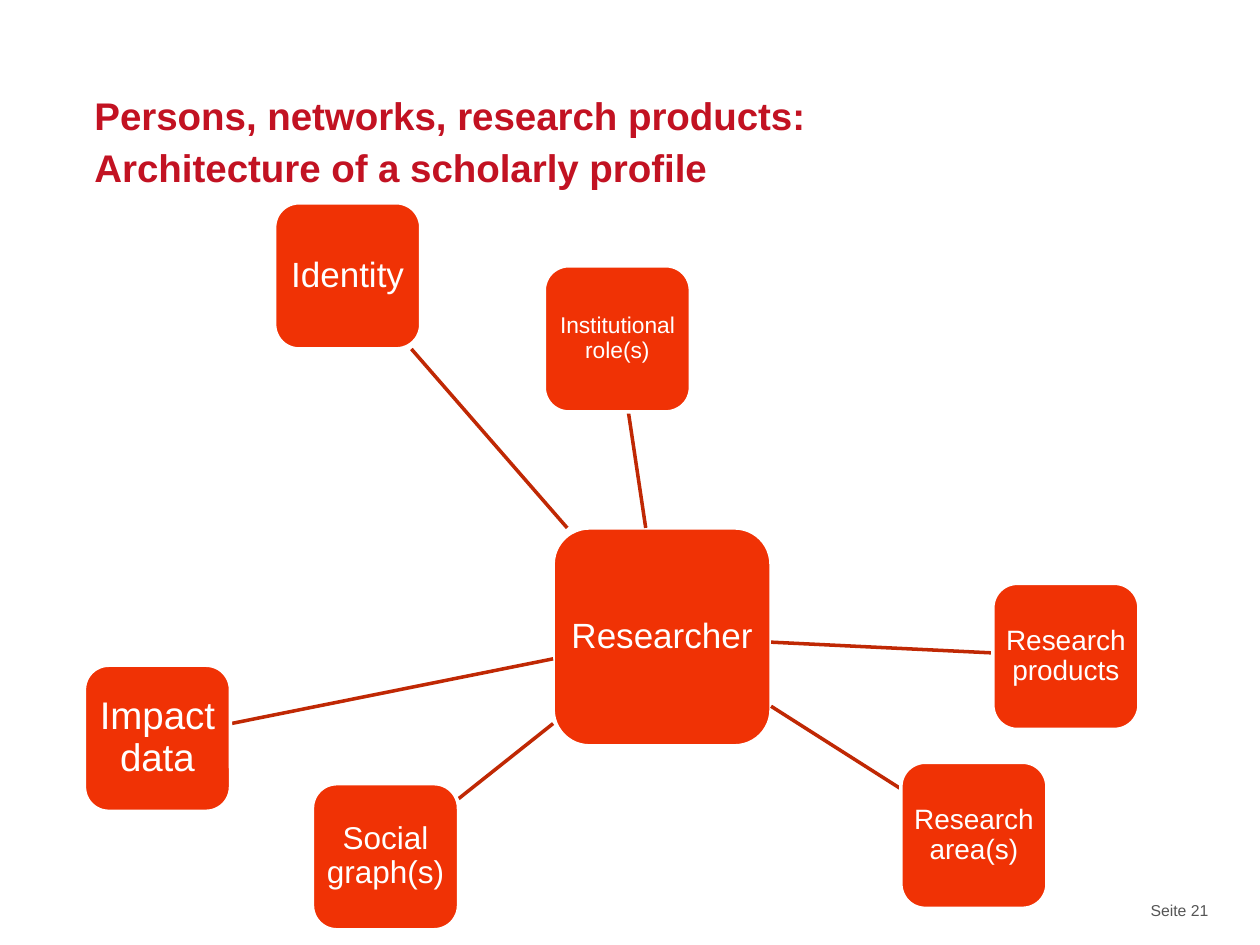
from dataclasses import dataclass
from lxml import etree
from pptx import Presentation
from pptx import util as u
from pptx.dml.color import RGBColor
from pptx.enum import shapes, text
from pptx.oxml.ns import qn


@dataclass(frozen=True)
class Theme:
    font: str = "Arial"
    title: str = "C21222"
    box: str = "F03205"
    link: str = "C02804"
    white: str = "FFFFFF"
    grey: str = "555555"
    head: int = 22
    foot: int = 9
    hub: int = 20
    line: int = 2


@dataclass
class Node:
    label: str
    x: float
    y: float
    size: int
    inset: float
    side: float = 1.16

    def center(self):
        return self.x + self.side / 2, self.y + self.side / 2

    def edge(self, other):
        """Point where the line between the two centres leaves this box."""
        (ax, ay), (bx, by) = self.center(), other.center()
        dx, dy = bx - ax, by - ay
        k = self.side / 2 / max(abs(dx), abs(dy))
        return u.Inches(ax + dx * k), u.Inches(ay + dy * k)


class Page:
    def __init__(self, slide, theme):
        self.slide = slide
        self.theme = theme

    def fill_text(self, shape, words, size, color, align, inset=0, bold=False, space=1.0):
        frame = shape.text_frame
        frame.word_wrap = True
        frame.margin_left = frame.margin_right = u.Inches(inset)
        frame.margin_top = frame.margin_bottom = u.Inches(inset)
        frame.text = words
        para = frame.paragraphs[0]
        para.alignment = align
        para.line_spacing = space
        font = para.font
        font.name, font.size, font.bold = self.theme.font, u.Pt(size), bold
        font.color.rgb = RGBColor.from_string(color)
        return frame

    def label(self, place, words, size, color, align, **style):
        shape = self.slide.shapes.add_textbox(*map(u.Inches, place))
        self.fill_text(shape, words, size, color, align, **style)

    def box(self, node):
        t = self.theme
        place = map(u.Inches, (node.x, node.y, node.side, node.side))
        shape = self.slide.shapes.add_shape(
            shapes.MSO_SHAPE.ROUNDED_RECTANGLE, *place)
        shape.shadow.inherit = False
        shape.fill.solid()
        shape.fill.fore_color.rgb = RGBColor.from_string(t.box)
        self.stroke(shape, t.white)
        frame = self.fill_text(shape, node.label, node.size, t.white,
                               text.PP_ALIGN.CENTER, inset=node.inset, space=0.9)
        frame.vertical_anchor = text.MSO_ANCHOR.MIDDLE

    def link(self, hub, node):
        line = self.slide.shapes.add_connector(
            shapes.MSO_CONNECTOR.STRAIGHT, *hub.edge(node), *node.edge(hub))
        self.stroke(line, self.theme.link)
        etree.SubElement(line._element.spPr, qn("a:effectLst"))

    def stroke(self, shape, color):
        shape.line.color.rgb = RGBColor.from_string(color)
        shape.line.width = u.Pt(self.theme.line)


def main():
    deck = Presentation()
    deck.slide_width, deck.slide_height = u.Inches(10), u.Inches(7.5)
    theme = Theme()
    page = Page(deck.slides.add_slide(deck.slide_layouts[6]), theme)

    page.label((8.29, 7.15, 1.3, 0.15), "Seite 21", theme.foot, theme.grey,
               text.PP_ALIGN.RIGHT)
    page.label((0.75, 0.68, 7.24, 0.47),
               "Persons, networks, research products:\v"
               "Architecture of a scholarly profile",
               theme.head, theme.title, text.PP_ALIGN.LEFT, bold=True, space=1.13)

    hub = Node("Researcher", 4.39, 4.19, theme.hub, 0.06, side=1.73)
    nodes = [
        Node("Identity", 2.18, 1.61, 20, 0.06),
        Node("Research products", 7.88, 4.63, 16, 0.04),
        Node("Social graph(s)", 2.48, 6.22, 18, 0.05),
        Node("Impact data", 0.67, 5.28, 22, 0.06),
        Node("Research area(s)", 7.15, 6.05, 16, 0.04),
        Node("Institutional role(s)", 4.32, 2.11, 13, 0.04),
    ]
    page.box(hub)
    for node in nodes:
        page.link(hub, node)
        page.box(node)

    deck.save("out.pptx")


if __name__ == "__main__":
    main()
